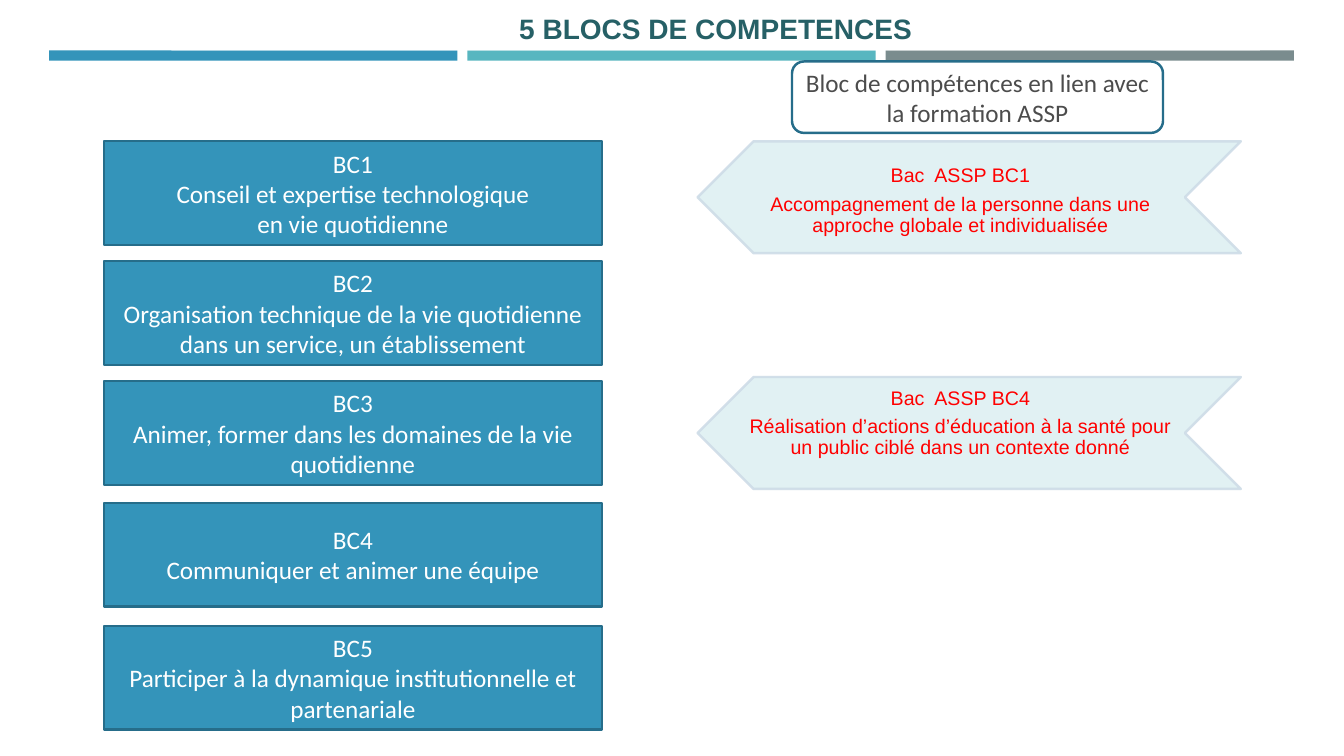
import pptx
import pptx.util
import pptx.dml.color
import pptx.enum.shapes
import pptx.enum.text
import pptx.oxml.ns
import lxml.etree

Cm = pptx.util.Cm
Pt = pptx.util.Pt
SHAPE = pptx.enum.shapes.MSO_SHAPE

COLOURS = {
    "blue": "3494BA",
    "teal": "58B6C0",
    "grey": "7A8C8E",
    "outline": "266D8A",
    "title": "266066",
    "arrow": "DEF0F2",
    "arrow edge": "CEDCE7",
    "red": "FF0000",
    "white": "FFFFFF",
    "black": "000000",
}

BLOCKS = [
    (3.56, ["BC1", "Conseil et expertise technologique", "en vie quotidienne"]),
    (6.58, ["BC2", "Organisation technique de la vie quotidienne dans un service, un établissement"]),
    (9.6, ["BC3", "Animer, former dans les domaines de la vie quotidienne"]),
    (12.67, ["BC4", "Communiquer et animer une équipe"]),
    (15.77, ["BC5", "Participer à la dynamique institutionnelle et partenariale"]),
]

LINKS = [
    (3.56, 0.03, ["Bac  ASSP BC1",
                  "Accompagnement de la personne dans une approche globale et individualisée"]),
    (9.5, 0.69, ["Bac  ASSP BC4",
                 "Réalisation d’actions d’éducation à la santé pour un public ciblé dans un contexte donné"]),
]


class SlideBuilder:
    def __init__(self, page):
        self.page = page

    def paint(self, fill, colour, opacity=100):
        fill.solid()
        fill.fore_color.rgb = pptx.dml.color.RGBColor.from_string(COLOURS[colour])
        if opacity < 100:
            properties = fill._xPr
            tone = properties.find(".//" + pptx.oxml.ns.qn("a:srgbClr"))
            alpha = lxml.etree.SubElement(tone, pptx.oxml.ns.qn("a:alpha"))
            alpha.set("val", str(opacity * 1000))

    def shape(self, kind, left, top, width, height, fill=None, line=None,
              opacity=100, shapes=None):
        shapes = self.page.shapes if shapes is None else shapes
        shape = shapes.add_shape(kind, Cm(left), Cm(top), Cm(width), Cm(height))
        shape.shadow.inherit = False
        if fill:
            self.paint(shape.fill, fill, opacity)
        else:
            shape.fill.background()
        if line:
            self.paint(shape.line.fill, line, opacity)
            shape.line.width = Pt(1.75)
        else:
            shape.line.fill.background()
        return shape

    def label(self, box, lines, size, colour, font="Calibri", bold=False, opacity=100):
        frame = box.text_frame
        frame.word_wrap = True
        frame.vertical_anchor = pptx.enum.text.MSO_ANCHOR.MIDDLE
        frame.text = "\n".join(lines)
        for para in frame.paragraphs:
            para.alignment = pptx.enum.text.PP_ALIGN.CENTER
            para.font.name = font
            para.font.size = Pt(size)
            para.font.bold = bold
            self.paint(para.font.fill, colour, opacity)
        return frame

    def block(self, top, lines):
        box = self.shape(SHAPE.RECTANGLE, 2.62, top, 12.55, 2.62, "blue", "outline")
        self.label(box, lines, 18, "white")

    def link(self, top, bottom_inset, lines):
        group = self.page.shapes.add_group_shape()
        arrow = self.shape(SHAPE.CHEVRON, 17.58, top, 13.69, 2.82,
                           "arrow", "arrow edge", 90, group.shapes)
        arrow.rotation = 180
        box = group.shapes.add_textbox(Cm(18.59), Cm(top + 0.1), Cm(11.18), Cm(2.82))
        frame = self.label(box, lines, 14, "red", "Arial")
        frame.margin_left, frame.margin_right = Cm(0.05), 0
        frame.margin_top, frame.margin_bottom = Cm(0.03), Cm(bottom_inset)
        for para in frame.paragraphs:
            para.line_spacing = 0.9
            para.space_after = Pt(5)


def main():
    deck = pptx.Presentation()
    deck.slide_width, deck.slide_height = Cm(33.87), Cm(19.05)
    builder = SlideBuilder(deck.slides.add_slide(deck.slide_layouts[6]))

    for column, colour in enumerate(["blue", "teal", "grey"]):
        builder.shape(SHAPE.RECTANGLE, 1.24 + 10.54 * column, 1.27, 10.29, 0.26, colour)

    title = builder.shape(SHAPE.RECTANGLE, 4.32, 0.15, 27.43, 1.12, "white")
    builder.label(title, ["5 BLOCS DE COMPETENCES"], 20, "title", "Arial", True)

    legend = builder.shape(SHAPE.ROUNDED_RECTANGLE, 19.96, 1.55, 9.35, 1.8, line="outline")
    builder.label(legend, ["Bloc de compétences en lien avec la formation ASSP"],
                  18, "black", opacity=70)

    for top, lines in BLOCKS:
        builder.block(top, lines)
    for top, bottom_inset, lines in LINKS:
        builder.link(top, bottom_inset, lines)

    deck.save("out.pptx")


if __name__ == "__main__":
    main()
